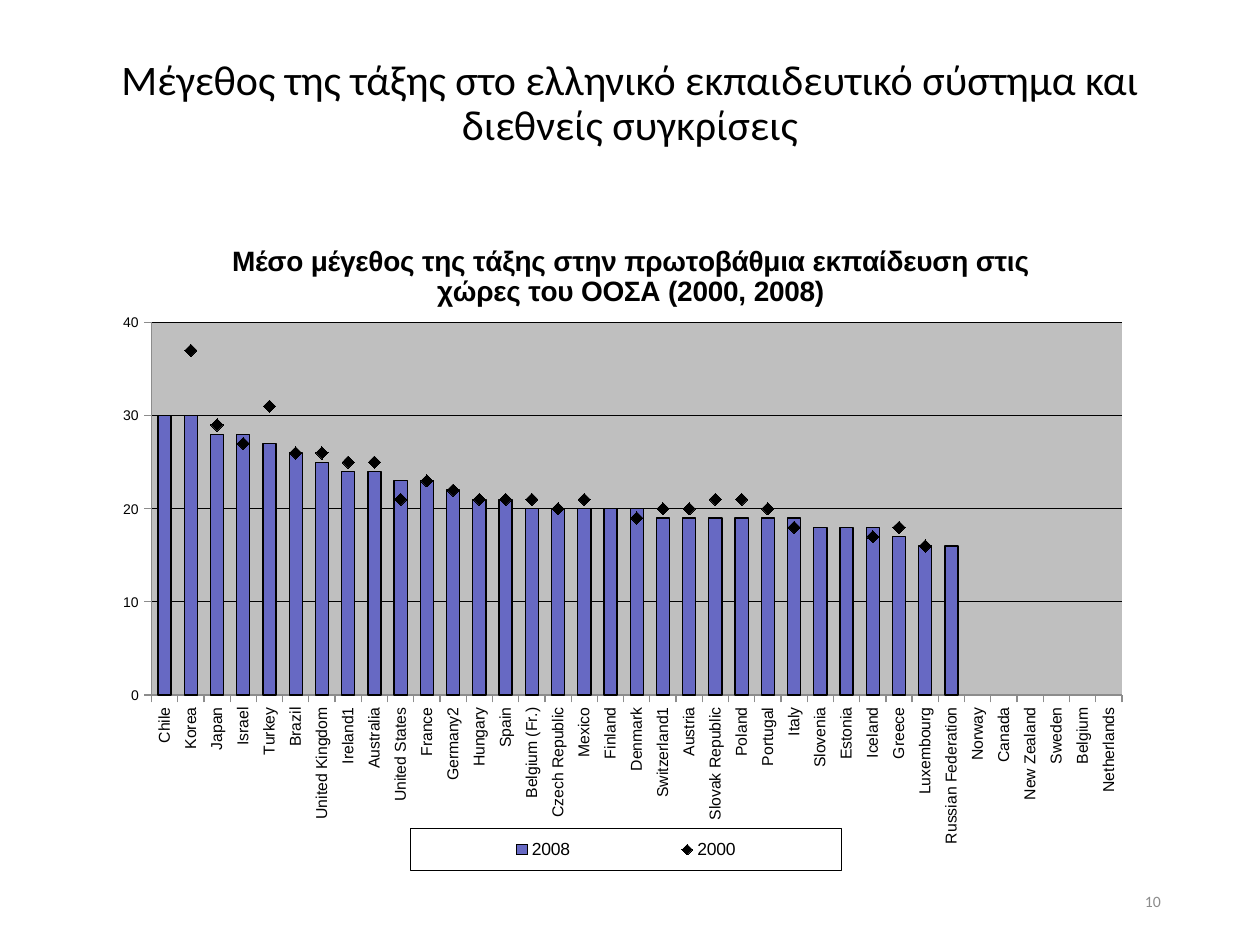
from copy import deepcopy
from pptx import Presentation
from pptx.chart.data import CategoryChartData
from pptx.dml.color import RGBColor
from pptx.enum.chart import XL_CHART_TYPE, XL_LEGEND_POSITION, XL_MARKER_STYLE, XL_TICK_MARK
from pptx.enum.text import MSO_ANCHOR, PP_ALIGN
from pptx.oxml import parse_xml
from pptx.oxml.ns import nsdecls, qn
from pptx.util import Cm, Pt

BARS = XL_CHART_TYPE.COLUMN_CLUSTERED
RIGHT = XL_LEGEND_POSITION.RIGHT
DIAMOND = XL_MARKER_STYLE.DIAMOND
OUT, NONE = XL_TICK_MARK.OUTSIDE, XL_TICK_MARK.NONE
MID = MSO_ANCHOR.MIDDLE

COLORS = {"ink": "000000", "paper": "FFFFFF", "mute": "8C8C8C", "bar": "6769C3", "plot": "BFBFBF"}

TEXTS = [
    ("Μέγεθος της τάξης στο ελληνικό εκπαιδευτικό σύστημα και διεθνείς συγκρίσεις",
     (1.75, 1.02, 21.9, 2.16), 24, "ink", {"alignment": PP_ALIGN.CENTER, "line_spacing": 0.9}),
    ("10", (17.93, 17.65, 5.72, 1.02), 9, "mute", {"alignment": PP_ALIGN.RIGHT}),
]
HEAD = "Μέσο μέγεθος της τάξης στην πρωτοβάθμια εκπαίδευση στις χώρες του ΟΟΣΑ (2000, 2008)"
FRAME = (1.75, 3.81, 21.74, 14.17)
ROWS = [
    ("Chile", 30, None), ("Korea", 30, 37), ("Japan", 28, 29), ("Israel", 28, 27),
    ("Turkey", 27, 31), ("Brazil", 26, 26), ("United Kingdom", 25, 26),
    ("Ireland1", 24, 25), ("Australia", 24, 25), ("United States", 23, 21),
    ("France", 23, 23), ("Germany2", 22, 22), ("Hungary", 21, 21), ("Spain", 21, 21),
    ("Belgium (Fr.)", 20, 21), ("Czech Republic", 20, 20), ("Mexico", 20, 21),
    ("Finland", 20, None), ("Denmark", 20, 19), ("Switzerland1", 19, 20),
    ("Austria", 19, 20), ("Slovak Republic", 19, 21), ("Poland", 19, 21),
    ("Portugal", 19, 20), ("Italy", 19, 18), ("Slovenia", 18, None),
    ("Estonia", 18, None), ("Iceland", 18, 17), ("Greece", 17, 18),
    ("Luxembourg", 16, 16), ("Russian Federation", 16, None),
    *[(land, None, None) for land in
      ("Norway", "Canada", "New Zealand", "Sweden", "Belgium", "Netherlands")],
]
SCALE = {"minimum_scale": 0, "maximum_scale": 40, "major_unit": 10, "has_major_gridlines": True}


def tone(name):
    return RGBColor.from_string(COLORS[name])


def apply(item, values):
    for key, value in values.items():
        setattr(item, key, value)


def style(font, size, name="Arial", color="ink", bold=False):
    apply(font, {"size": Pt(size), "name": name, "bold": bold})
    font.color.rgb = tone(color)


def stroke(line, color="ink"):
    line.width = Pt(0.75)
    line.color.rgb = tone(color)


def place(node, spot, inner=False, **box):
    for old in node.findall(qn("c:layout")):
        node.remove(old)
    parts = '<c:layoutTarget val="inner"/>' if inner else ""
    parts += "".join(f'<c:{key}Mode val="edge"/>' for key in "xy")
    parts += "".join(f'<c:{key} val="{value}"/>' for key, value in box.items())
    node.insert(spot, parse_xml(
        f'<c:layout {nsdecls("c")}><c:manualLayout>{parts}</c:manualLayout></c:layout>'))


def panel(fill, edge=None):
    paint = '<a:solidFill><a:srgbClr val="{}"/></a:solidFill>'
    rim = paint.format(COLORS[edge]) if edge else "<a:noFill/>"
    return parse_xml(f'<c:spPr {nsdecls("c", "a")}>{paint.format(COLORS[fill])}'
                     f'<a:ln w="9525">{rim}</a:ln></c:spPr>')


def combine(chart):
    bars = chart.plots[0]._element
    line = parse_xml(f'<c:lineChart {nsdecls("c")}><c:grouping val="standard"/>'
                     '<c:varyColors val="0"/><c:marker val="1"/></c:lineChart>')
    dots = bars.findall(qn("c:ser"))[1]
    for flag in dots.findall(qn("c:invertIfNegative")):
        dots.remove(flag)
    line.insert(2, dots)
    for axis in bars.findall(qn("c:axId")):
        line.append(deepcopy(axis))
    bars.addnext(line)


def draw(slide):
    data = CategoryChartData(number_format="#,##0")
    names, new, old = zip(*ROWS)
    data.categories = names
    data.add_series("2008", new)
    data.add_series("2000", old)
    chart = slide.shapes.add_chart(BARS, *map(Cm, FRAME), data).chart
    style(chart.font, 10, "Calibri")
    combine(chart)

    bars, line = chart.plots
    apply(bars, {"gap_width": 100, "vary_by_categories": False})
    bar, dots = bars.series[0], line.series[0]
    bar.format.fill.solid()
    bar.format.fill.fore_color.rgb = tone("bar")
    stroke(bar.format.line)
    dots.smooth = False
    dots.format.line.fill.background()
    apply(dots.marker, {"style": DIAMOND, "size": 7})
    dots.marker.format.fill.solid()
    dots.marker.format.fill.fore_color.rgb = tone("ink")
    stroke(dots.marker.format.line)

    for axis, size in ((chart.category_axis, 9), (chart.value_axis, 8)):
        apply(axis, {"major_tick_mark": OUT, "minor_tick_mark": NONE})
        style(axis.tick_labels.font, size)
        stroke(axis.format.line, "mute")
    turn = chart.category_axis._element.find(qn("c:txPr")).find(qn("a:bodyPr"))
    turn.set("rot", "-5400000")
    turn.set("vert", "horz")
    apply(chart.value_axis, SCALE)
    apply(chart.value_axis.tick_labels, {"number_format": "#,##0", "number_format_is_linked": False})
    stroke(chart.value_axis.major_gridlines.format.line)

    title = chart.chart_title
    title.text_frame.text = HEAD
    style(title.text_frame.paragraphs[0].runs[0].font, 16, bold=True)
    place(title._element, 1, x=0.13, y=0.07)

    chart.has_legend = True
    key = chart.legend
    apply(key, {"position": RIGHT, "include_in_layout": False})
    style(key.font, 10)
    place(key._element, 1, x=0.3, y=0.91, w=0.4, h=0.06)
    key._element.find(qn("c:txPr")).addprevious(panel("paper", "ink"))

    area = bars._element.getparent()
    place(area, 0, inner=True, x=0.06, y=0.19, w=0.9, h=0.53)
    area.append(panel("plot"))


def write(slide, text, box, size, color, form):
    frame = slide.shapes.add_textbox(*map(Cm, box)).text_frame
    apply(frame, {"word_wrap": True, "vertical_anchor": MID})
    para = frame.paragraphs[0]
    para.text = text
    apply(para, form)
    style(para.runs[0].font, size, "Calibri", color)


def main():
    deck = Presentation()
    apply(deck, {"slide_width": Cm(25.4), "slide_height": Cm(19.05)})
    slide = deck.slides.add_slide(deck.slide_layouts[6])
    for item in TEXTS:
        write(slide, *item)
    draw(slide)
    deck.save("out.pptx")


if __name__ == "__main__":
    main()
